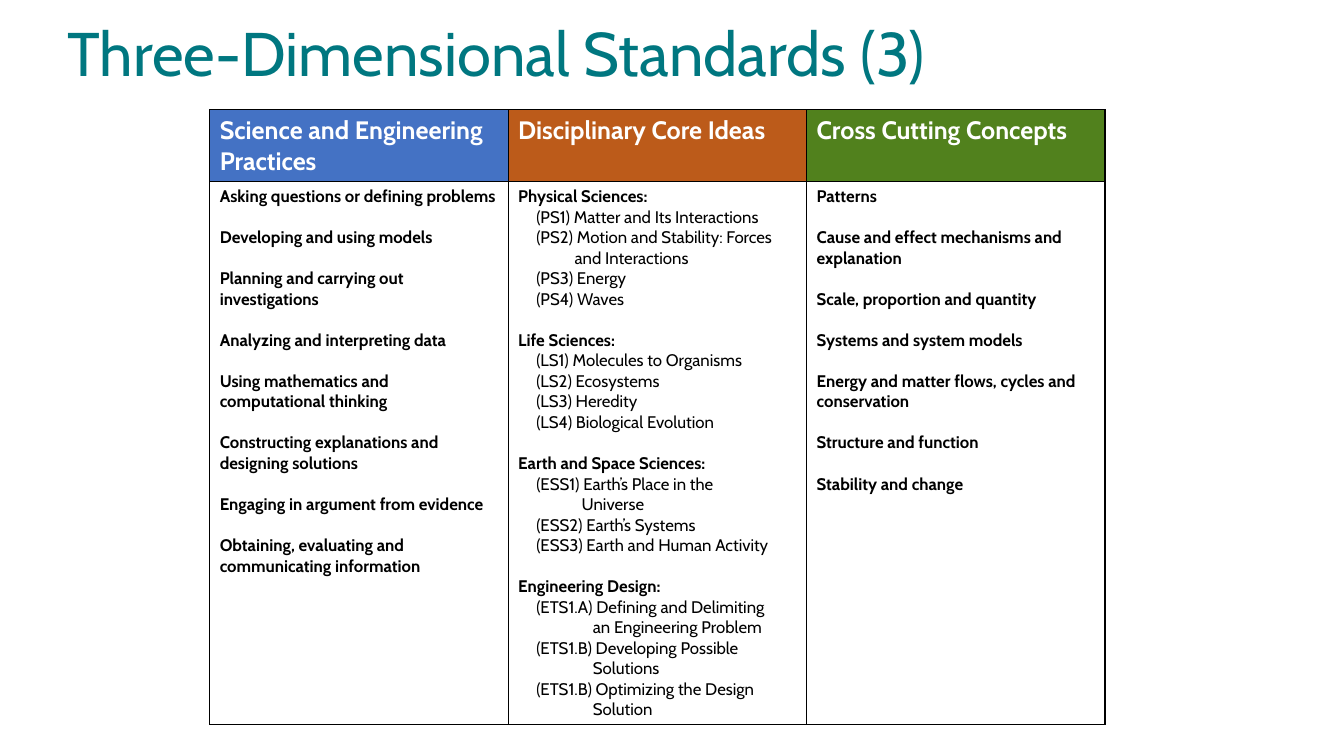
from dataclasses import dataclass

from lxml import etree
from pptx import Presentation
from pptx import util as u
from pptx.dml.color import RGBColor
from pptx.enum import text
from pptx.oxml import ns

FONT = "Cabin"
TEAL = RGBColor(0x00, 0x77, 0x80)
BLUE = RGBColor(0x44, 0x72, 0xC4)
ORANGE = RGBColor(0xBC, 0x5B, 0x1A)
GREEN = RGBColor(0x51, 0x81, 0x1D)
WHITE = RGBColor(0xFF, 0xFF, 0xFF)
BLACK = RGBColor(0x00, 0x00, 0x00)

ITEM_INDENT = 0.18
GROUP_GAP = 14.65
COLUMN_WIDTH = 2.96
ROW_HEIGHTS = (0.71, 5.39)


@dataclass
class Line:
    wording: str
    indent: float = ITEM_INDENT
    bold: bool = False
    gap: float = 0


@dataclass
class Dimension:
    heading: str
    color: RGBColor
    lines: list[Line]


def heading_lines(wordings: list[str]) -> list[Line]:
    return [Line(wording, 0, True, GROUP_GAP if index else 0)
            for index, wording in enumerate(wordings)]


def science_lines(groups: dict[str, list[Line]]) -> list[Line]:
    lines: list[Line] = []
    for heading, items in zip(heading_lines(list(groups)), groups.values()):
        lines += [heading, *items]
    return lines


DIMENSIONS = [
    Dimension("Science and Engineering Practices", BLUE, heading_lines([
        "Asking questions or defining problems",
        "Developing and using models",
        "Planning and carrying out investigations",
        "Analyzing and interpreting data",
        "Using mathematics and computational thinking",
        "Constructing explanations and designing solutions",
        "Engaging in argument from evidence",
        "Obtaining, evaluating and communicating information",
    ])),
    Dimension("Disciplinary Core Ideas", ORANGE, science_lines({
        "Physical Sciences:": [
            Line("(PS1) Matter and Its Interactions"),
            Line("(PS2) Motion and Stability: Forces"),
            Line("and Interactions", 0.56),
            Line("(PS3) Energy"),
            Line("(PS4) Waves"),
        ],
        "Life Sciences:": [
            Line("(LS1) Molecules to Organisms"),
            Line("(LS2) Ecosystems"),
            Line("(LS3) Heredity"),
            Line("(LS4) Biological Evolution"),
        ],
        "Earth and Space Sciences:": [
            Line("(ESS1) Earth’s Place in the"),
            Line("Universe", 0.63),
            Line("(ESS2) Earth’s Systems"),
            Line("(ESS3) Earth and Human Activity"),
        ],
        "Engineering Design:": [
            Line("(ETS1.A) Defining and Delimiting"),
            Line("an Engineering Problem", 0.74),
            Line("(ETS1.B) Developing Possible"),
            Line("Solutions", 0.74),
            Line("(ETS1.B) Optimizing the Design"),
            Line("Solution", 0.74),
        ],
    })),
    Dimension("Cross Cutting Concepts", GREEN, heading_lines([
        "Patterns",
        "Cause and effect mechanisms and explanation",
        "Scale, proportion and quantity",
        "Systems and system models",
        "Energy and matter flows, cycles and conservation",
        "Structure and function",
        "Stability and change",
    ])),
]


def add_run(paragraph, wording: str, size: float, color: RGBColor, bold: bool = False) -> None:
    run = paragraph.add_run()
    run.text = wording
    run.font.name = FONT
    run.font.size = u.Pt(size)
    run.font.bold = bold
    run.font.color.rgb = color


def add_title(slide, wording: str) -> None:
    shape = slide.shapes.add_textbox(u.Inches(0.57), u.Inches(0.03), u.Inches(9.4), u.Inches(1.06))
    frame = shape.text_frame
    frame.word_wrap = True
    frame.vertical_anchor = text.MSO_ANCHOR.MIDDLE
    paragraph = frame.paragraphs[0]
    paragraph.line_spacing = 0.9
    add_run(paragraph, wording, 44, TEAL)


def style_cell(cell, color: RGBColor) -> None:
    properties = cell._tc.get_or_add_tcPr()
    for side in ("lnL", "lnR", "lnT", "lnB"):
        border = etree.SubElement(properties, ns.qn(f"a:{side}"), w=str(u.Pt(1)))
        fill = etree.SubElement(border, ns.qn("a:solidFill"))
        etree.SubElement(fill, ns.qn("a:srgbClr"), val=str(BLACK))
    cell.fill.solid()
    cell.fill.fore_color.rgb = color


def fill_cell(cell, lines: list[Line], size: float, color: RGBColor) -> None:
    frame = cell.text_frame
    for index, line in enumerate(lines):
        paragraph = frame.add_paragraph() if index else frame.paragraphs[0]
        if line.gap:
            paragraph.space_before = u.Pt(line.gap)
        if line.indent:
            paragraph._p.get_or_add_pPr().set("marL", str(u.Inches(line.indent)))
        add_run(paragraph, line.wording, size, color, line.bold)


def add_standards_table(slide, dimensions: list[Dimension]) -> None:
    table = slide.shapes.add_table(
        len(ROW_HEIGHTS), len(dimensions), u.Inches(2.08), u.Inches(1.09),
        u.Inches(COLUMN_WIDTH * len(dimensions)), u.Inches(sum(ROW_HEIGHTS))).table
    for row, height in zip(table.rows, ROW_HEIGHTS):
        row.height = u.Inches(height)
    for index, dimension in enumerate(dimensions):
        table.columns[index].width = u.Inches(COLUMN_WIDTH)
        header, body = table.cell(0, index), table.cell(1, index)
        style_cell(header, dimension.color)
        fill_cell(header, heading_lines([dimension.heading]), 18, WHITE)
        style_cell(body, WHITE)
        fill_cell(body, dimension.lines, 12, BLACK)


def main() -> None:
    presentation = Presentation()
    presentation.slide_width = u.Inches(13.33)
    presentation.slide_height = u.Inches(7.5)
    slide = presentation.slides.add_slide(presentation.slide_layouts[6])
    add_title(slide, "Three-Dimensional Standards (3)")
    add_standards_table(slide, DIMENSIONS)
    presentation.save("out.pptx")


if __name__ == "__main__":
    main()
